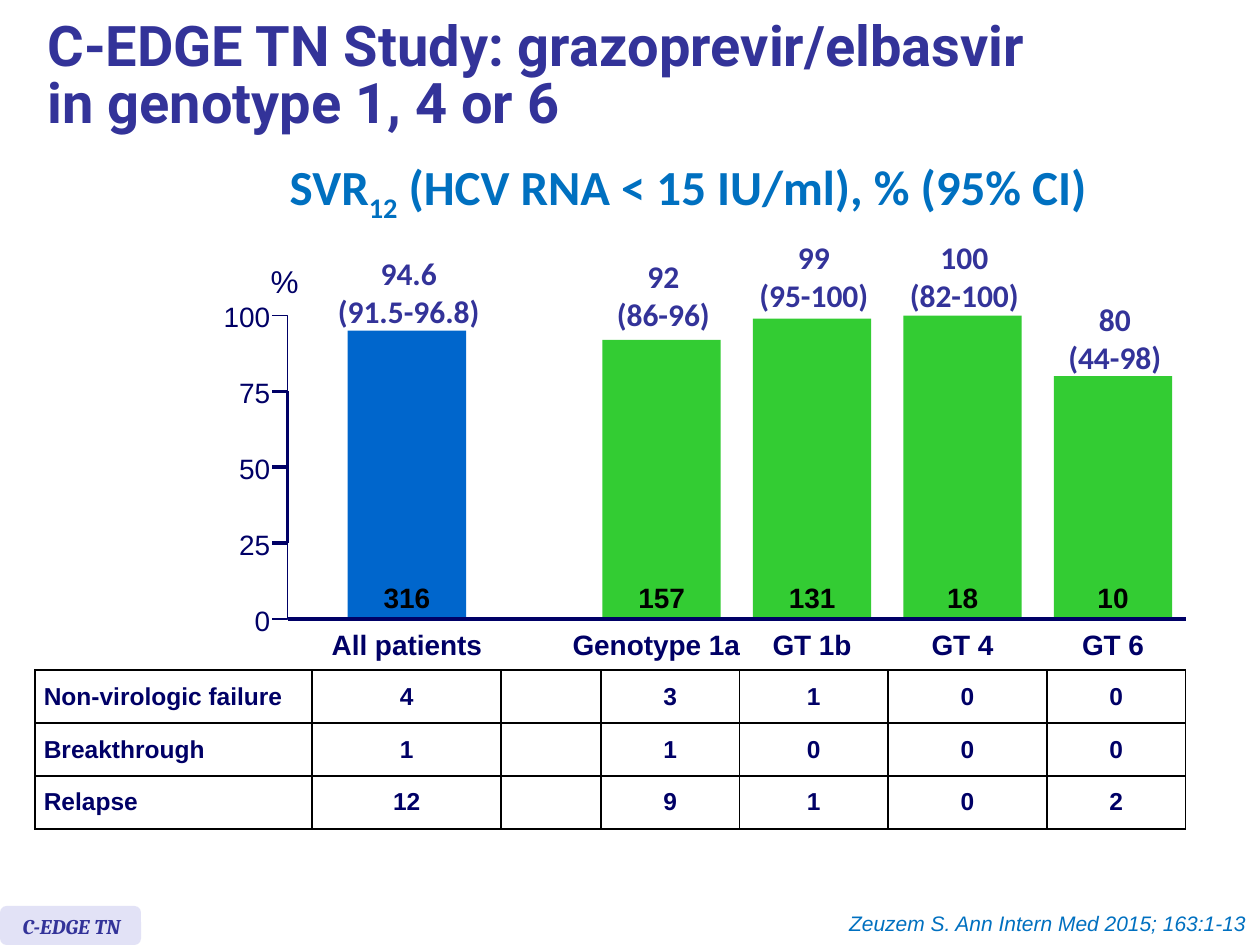
from lxml import etree
from pptx import Presentation
from pptx.dml.color import RGBColor
from pptx.enum.shapes import MSO_CONNECTOR, MSO_SHAPE
from pptx.enum.text import MSO_ANCHOR, MSO_AUTO_SIZE, PP_ALIGN
from pptx.oxml.ns import qn
from pptx.util import Pt

INDIGO = RGBColor(0x33, 0x33, 0x99)
NAVY = RGBColor(0x00, 0x00, 0x66)
SKY = RGBColor(0x00, 0x70, 0xC0)
BLUE = RGBColor(0x00, 0x66, 0xCC)
GREEN = RGBColor(0x33, 0xCC, 0x33)
LAVENDER = RGBColor(0xE2, 0xE2, 0xF6)
BLACK = RGBColor(0, 0, 0)

LEFT, CENTER, RIGHT = PP_ALIGN.LEFT, PP_ALIGN.CENTER, PP_ALIGN.RIGHT
TOP, MIDDLE = MSO_ANCHOR.TOP, MSO_ANCHOR.MIDDLE
RECT, ROUNDED = MSO_SHAPE.RECTANGLE, MSO_SHAPE.ROUNDED_RECTANGLE
STRAIGHT = MSO_CONNECTOR.STRAIGHT
FIT, NO_FIT = MSO_AUTO_SIZE.SHAPE_TO_FIT_TEXT, MSO_AUTO_SIZE.NONE

TITLE = dict(name="Roboto", size=Pt(32), bold=True, color=INDIGO)
SUBTITLE = dict(name="Calibri", size=Pt(28), bold=True, color=SKY)
RATE = dict(name="Calibri", size=Pt(18), bold=True, color=INDIGO)
UNIT = dict(name="Arial", size=Pt(18), color=NAVY)
TICK = dict(name="Arial", size=Pt(16), color=NAVY)
CATEGORY = dict(TICK, bold=True)
COUNT = dict(CATEGORY, color=BLACK)
CELL = dict(name="Arial", size=Pt(14), bold=True, color=NAVY)
BADGE = dict(name="Cambria", size=Pt(12), bold=True, italic=True, color=INDIGO)
CITATION = dict(name="Arial", size=Pt(12), italic=True, color=SKY)

BASELINE, FULL_HEIGHT = 353.7, 173.4
AXIS_X, TICK_X, AXIS_END = 164.3, 155.5, 677.5
BAR_WIDTH, BAR_PITCH = 67.7, 86
ALL_LEFT, GENOTYPE_LEFT = 198.7, 344.2
DIGIT_WIDTH, LINE_HEIGHT = 8.9, 19.4

# category, width, shift; rate, bar height in %, interval, width, top; count
GROUPS = [
    ("All patients", 87, 0, "94.6", 95, "(91.5-96.8)", 82, 145.4, "316"),
    ("Genotype 1a", 97, -3, "92", 92, "(86-96)", 54, 147, "157"),
    ("GT 1b", 46, 0, "99", 99, "(95-100)", 63, 136, "131"),
    ("GT 4", 36, 0, "100", 100, "(82-100)", 63, 136, "18"),
    ("GT 6", 36, 0, "80", 80, "(44-98)", 54, 171.4, "10"),
]
FAILURES = [
    ("Non-virologic failure", "4", "", "3", "1", "0", "0"),
    ("Breakthrough", "1", "", "1", "0", "0", "0"),
    ("Relapse", "12", "", "9", "1", "0", "2"),
]
COLUMN_WIDTHS = [158.4, 108, 56.9, 79.2, 85, 90.7, 79.2]
ROW_HEIGHT = 30.24


def height_of(percent):
    return FULL_HEIGHT * percent / 100


class SlideBuilder:
    def __init__(self, slide, axis_color):
        self.slide = slide
        self.axis_color = axis_color

    def styled_run(self, paragraph, text, style):
        run = paragraph.add_run()
        run.text = text
        for key, value in style.items():
            if key == "color":
                run.font.color.rgb = value
            else:
                setattr(run.font, key, value)
        return run

    def text(self, box, lines, style, align=LEFT, spacing=None, wrap=False,
             inset=True, fit=FIT, anchor=TOP, parent=None):
        """Add a text box; box is left, top, width, height in points."""
        shapes = (parent or self.slide).shapes
        frame = shapes.add_textbox(*map(Pt, box)).text_frame
        frame.word_wrap, frame.auto_size = wrap, fit
        frame.vertical_anchor = anchor
        if not inset:
            frame.margin_left = frame.margin_right = 0
            frame.margin_top = frame.margin_bottom = 0
        for index, line in enumerate(lines):
            paragraph = frame.add_paragraph() if index else frame.paragraphs[0]
            paragraph.alignment = align
            paragraph.line_spacing = spacing
            self.styled_run(paragraph, line, style)
        return frame

    def label(self, center, top, width, lines, style):
        box = (center - width / 2, top, width, LINE_HEIGHT)
        self.text(box, lines, style, CENTER, inset=False)

    def block(self, kind, box, color, parent=None):
        shape = (parent or self.slide).shapes.add_shape(kind, *map(Pt, box))
        shape.shadow.inherit = False
        shape.fill.solid()
        shape.fill.fore_color.rgb = color
        shape.line.fill.background()

    def axis_line(self, *ends):
        line = self.slide.shapes.add_connector(STRAIGHT, *map(Pt, ends))
        line.line.color.rgb = self.axis_color
        line.line.width = Pt(0)
        etree.SubElement(line._element.spPr, qn("a:effectLst"))

    def axis_corner(self, tick_y, end_y):
        """Draw an end tick and its stretch of the axis as one outline."""
        builder = self.slide.shapes.build_freeform(Pt(TICK_X), Pt(tick_y))
        builder.add_line_segments(
            [(Pt(AXIS_X), Pt(tick_y)), (Pt(AXIS_X), Pt(end_y))], close=False)
        corner = builder.convert_to_shape()
        corner.shadow.inherit = False
        corner.fill.background()
        corner.line.color.rgb = self.axis_color
        corner.line.width = Pt(0)

    def border(self, cell):
        properties = cell._tc.get_or_add_tcPr()
        for side in ("lnL", "lnR", "lnT", "lnB"):
            edge = etree.SubElement(properties, qn(f"a:{side}"), w=str(Pt(1)))
            fill = etree.SubElement(edge, qn("a:solidFill"))
            etree.SubElement(fill, qn("a:srgbClr"), val=str(BLACK))

    def table(self, left, top, rows, widths, row_height, style):
        box = (left, top, sum(widths), row_height * len(rows))
        table = self.slide.shapes.add_table(
            len(rows), len(widths), *map(Pt, box)).table
        table.first_row = table.horz_banding = False
        for column, width in zip(table.columns, widths):
            column.width = Pt(width)
        for row, values in zip(table.rows, rows):
            row.height = Pt(row_height)
            for index, (cell, value) in enumerate(zip(row.cells, values)):
                self.border(cell)
                cell.fill.background()
                cell.vertical_anchor = MIDDLE
                cell.margin_left = cell.margin_right = Pt(5)
                cell.margin_top = cell.margin_bottom = 0
                if value:
                    paragraph = cell.text_frame.paragraphs[0]
                    paragraph.alignment = CENTER if index else LEFT
                    self.styled_run(paragraph, value, style)


def draw_axes(builder):
    ticks = {value: BASELINE - height_of(value) for value in range(0, 101, 25)}
    for value in (75, 50, 25):
        builder.axis_line(TICK_X, ticks[value], AXIS_X, ticks[value])
    for value in (75, 50):
        builder.axis_line(AXIS_X, ticks[value], AXIS_X, ticks[value - 25])
    builder.axis_corner(ticks[0], ticks[25])
    builder.axis_corner(ticks[100], ticks[75])
    builder.axis_line(AXIS_END, BASELINE, AXIS_X, BASELINE)
    for value, y in ticks.items():
        width = DIGIT_WIDTH * len(str(value))
        builder.text((154.4 - width, y - 9, width, LINE_HEIGHT), [str(value)],
                     TICK, RIGHT, inset=False)
    builder.text((147.6, 146.2, 31, 28.8), ["%"], UNIT)


def draw_groups(builder):
    for index, group in enumerate(GROUPS):
        (category, category_width, shift, rate, percent, interval,
         interval_width, rate_top, count) = group
        left = GENOTYPE_LEFT + BAR_PITCH * (index - 1) if index else ALL_LEFT
        center = left + BAR_WIDTH / 2
        height = height_of(percent)
        builder.block(RECT, (left, BASELINE - height, BAR_WIDTH, height),
                      GREEN if index else BLUE)
        builder.label(center + 1, rate_top, interval_width, [rate, interval], RATE)
        builder.label(center + shift, 358.6, category_width, [category], CATEGORY)
        builder.label(center, 332, DIGIT_WIDTH * len(count), [count], COUNT)


def main():
    deck = Presentation()
    deck.slide_width, deck.slide_height = Pt(720), Pt(540)
    slide = deck.slides.add_slide(deck.slide_layouts[6])
    builder = SlideBuilder(slide, NAVY)

    badge = slide.shapes.add_group_shape()
    builder.block(ROUNDED, (0, 517.7, 80.6, 22.3), LAVENDER, badge)
    builder.text((5.8, 518.4, 87.8, 21.6), ["C-EDGE TN"], BADGE, wrap=True,
                 parent=badge)
    builder.text((20, 5.8, 657.4, 77), ["C-EDGE TN Study: grazoprevir/elbasvir",
                 "in genotype 1, 4 or 6"], TITLE, spacing=0.85, wrap=True,
                 fit=NO_FIT, anchor=MIDDLE)
    builder.table(20, 383, FAILURES, COLUMN_WIDTHS, ROW_HEIGHT, CELL)
    draw_groups(builder)
    draw_axes(builder)

    endpoint = builder.text((152, 100.8, 482.4, 33), ["SVR"], SUBTITLE, CENTER,
                            Pt(23.6)).paragraphs[0]
    subscript = builder.styled_run(endpoint, "12", SUBTITLE)
    subscript.font._element.set("baseline", "-25000")
    builder.styled_run(endpoint, " (HCV RNA < 15 IU/ml), % (95% CI)", SUBTITLE)
    builder.text((360, 517, 359.3, 21.6),
                 ["Zeuzem S. Ann Intern Med 2015; 163:1-13"], CITATION, RIGHT,
                 wrap=True)
    deck.save("out.pptx")


if __name__ == "__main__":
    main()
